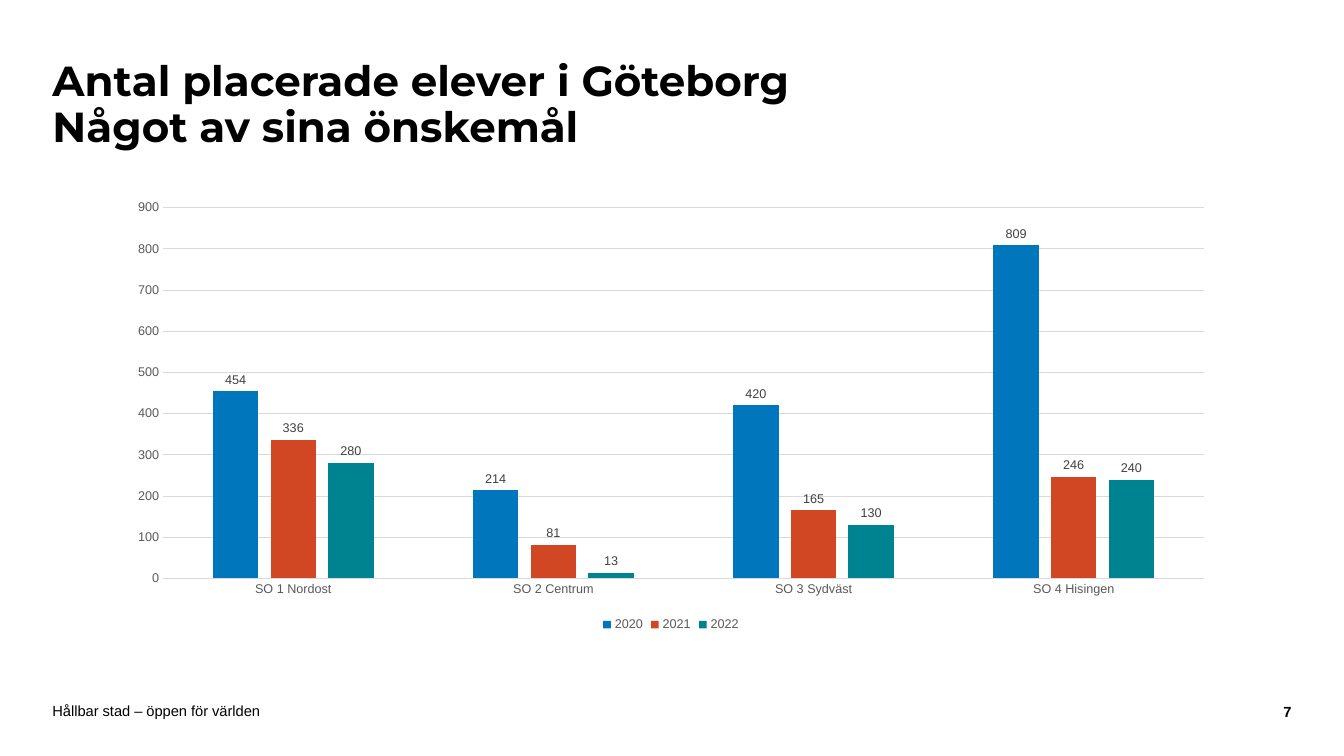
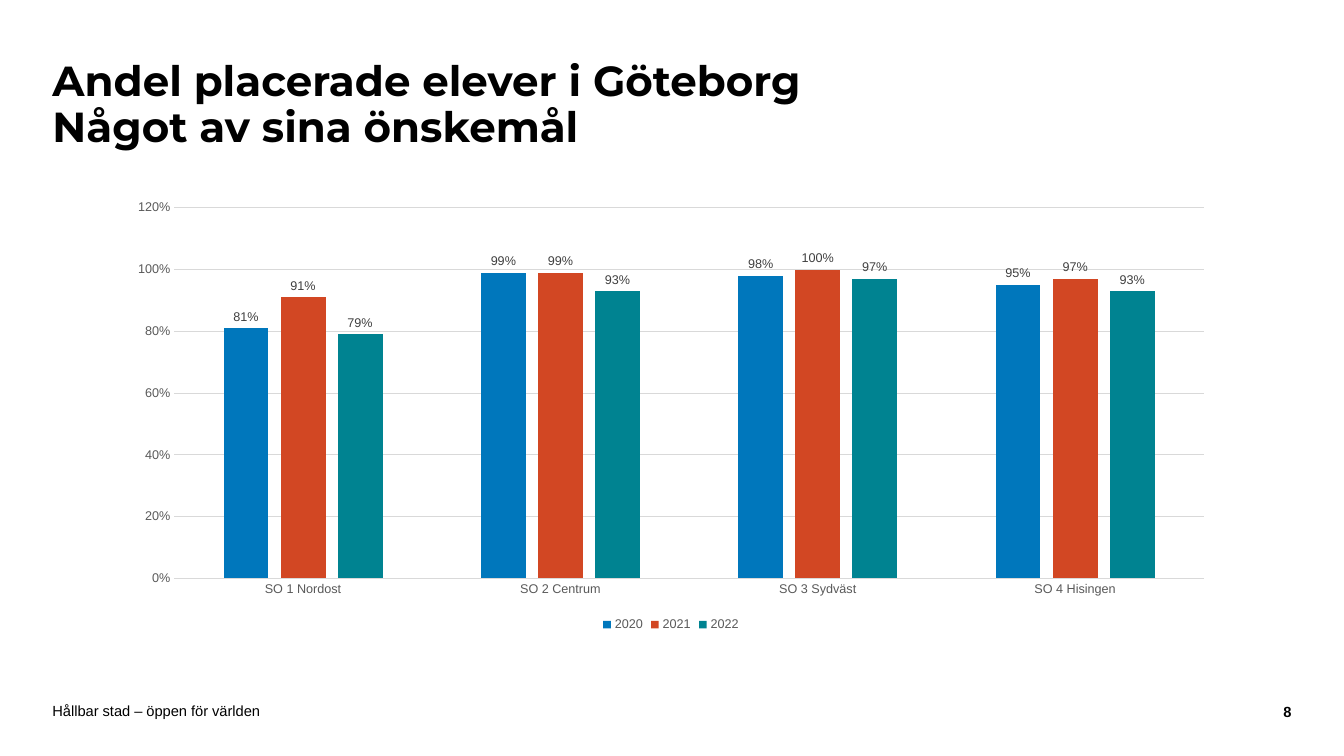
from pptx import Presentation
from pptx.chart.data import CategoryChartData
from pptx.dml.color import RGBColor
from pptx.enum.chart import (XL_CHART_TYPE as ChartType, XL_LABEL_POSITION as LabelPos,
                             XL_LEGEND_POSITION as LegendPos, XL_TICK_MARK as Tick)
from pptx.enum.text import MSO_ANCHOR as Anchor, MSO_AUTO_SIZE as AutoSize, PP_ALIGN as Align
from pptx.util import Inches, Pt

# Shared look
BLACK, GREY, LABEL_GREY, RULE = "000000", "595959", "404040", "D9D9D9"
YEAR_COLOURS = {"2020": "0077BC", "2021": "D24723", "2022": "008391"}
BODY_FONT, TITLE_FONT = "Arial", "Montserrat"
FOOTER = "Hållbar stad – öppen för världen"
AREAS = ["SO 1 Nordost", "SO 2 Centrum", "SO 3 Sydväst", "SO 4 Hisingen"]

# Regions: left, top, width, height in inches
TITLE_BOX = (0.52, 0.42, 10.03, 1.26)
CHART_BOX = (1.15, 1.9, 11.01, 4.41)
FOOTER_BOX = (0.52, 6.97, 9.45, 0.16)
NUMBER_BOX = (12.17, 6.98, 0.64, 0.16)

# Content: page number, title, number format, values by year
PAGES = [
    (7, "Antal placerade elever i Göteborg\nNågot av sina önskemål", "General",
     [(454, 214, 420, 809), (336, 81, 165, 246), (280, 13, 130, 240)]),
    (8, "Andel placerade elever i Göteborg\nNågot av sina önskemål", "0%",
     [(0.81, 0.99, 0.98, 0.95), (0.91, 0.99, 1, 0.97), (0.79, 0.93, 0.97, 0.93)]),
]


def rgb(colour):
    return RGBColor.from_string(colour)


def inches(box):
    return [Inches(length) for length in box]


def style_font(font, size, colour, name=BODY_FONT, bold=False):
    font.size, font.name, font.bold = Pt(size), name, bold
    font.color.rgb = rgb(colour)


def style_line(line, colour):
    line.color.rgb = rgb(colour)
    line.width = Pt(0.75)


def fill_frame(frame, text, size, font=BODY_FONT, bold=False, align=Align.LEFT, inset=0):
    frame.word_wrap, frame.auto_size = True, AutoSize.NONE
    frame.vertical_anchor = Anchor.MIDDLE
    frame.margin_left = frame.margin_right = 0
    frame.margin_top = frame.margin_bottom = Inches(inset)
    paragraph = frame.paragraphs[0]
    paragraph.text = text
    paragraph.alignment = align
    for run in paragraph.runs:
        style_font(run.font, size, BLACK, font, bold)
    return paragraph


def add_title(slide, box, text):
    title = slide.shapes.title
    title.left, title.top, title.width, title.height = inches(box)
    heading = fill_frame(title.text_frame, text, 30, TITLE_FONT, bold=True, inset=0.05)
    heading.line_spacing = 0.9


def add_footer(slide, number):
    footer = slide.shapes.add_textbox(*inches(FOOTER_BOX))
    fill_frame(footer.text_frame, FOOTER, 10.5)
    page_number = slide.shapes.add_textbox(*inches(NUMBER_BOX))
    fill_frame(page_number.text_frame, str(number), 10.5, bold=True, align=Align.RIGHT)


def style_axes(chart, number_format):
    areas, scale = chart.category_axis, chart.value_axis
    for axis in (areas, scale):
        axis.major_tick_mark = axis.minor_tick_mark = Tick.NONE
        style_font(axis.tick_labels.font, 9, GREY)
    style_line(areas.format.line, RULE)
    scale.format.line.fill.background()
    scale.has_major_gridlines = True
    style_line(scale.major_gridlines.format.line, RULE)
    scale.tick_labels.number_format = number_format
    scale.tick_labels.number_format_is_linked = False


def style_bars(plot, number_format):
    plot.gap_width, plot.overlap = 219, -27
    plot.vary_by_categories = False
    for bars in plot.series:
        bars.format.fill.solid()
        bars.format.fill.fore_color.rgb = rgb(YEAR_COLOURS[bars.name])
        bars.invert_if_negative = False
        labels = bars.data_labels
        labels.show_value, labels.position = True, LabelPos.OUTSIDE_END
        labels.number_format = number_format
        labels.number_format_is_linked = False
        style_font(labels.font, 9, LABEL_GREY)


def add_year_chart(slide, box, number_format, values_by_year):
    data = CategoryChartData(number_format=number_format)
    data.categories = AREAS
    for year, values in zip(YEAR_COLOURS, values_by_year):
        data.add_series(year, values)
    chart = slide.shapes.add_chart(ChartType.COLUMN_CLUSTERED, *inches(box), data).chart
    chart.has_title = False
    style_font(chart.font, 10, BLACK)
    style_axes(chart, number_format)
    style_bars(chart.plots[0], number_format)
    # Legend below the bars
    chart.has_legend = True
    chart.legend.position = LegendPos.BOTTOM
    chart.legend.include_in_layout = False
    style_font(chart.legend.font, 9, GREY)


def add_page(prs, number, title, number_format, values_by_year):
    slide = prs.slides.add_slide(prs.slide_layouts.get_by_name("Title Only"))
    add_footer(slide, number)
    add_title(slide, TITLE_BOX, title)
    add_year_chart(slide, CHART_BOX, number_format, values_by_year)


def main():
    prs = Presentation()
    prs.slide_width, prs.slide_height = Inches(13.33), Inches(7.5)
    for page in PAGES:
        add_page(prs, *page)
    prs.save("out.pptx")


if __name__ == "__main__":
    main()
